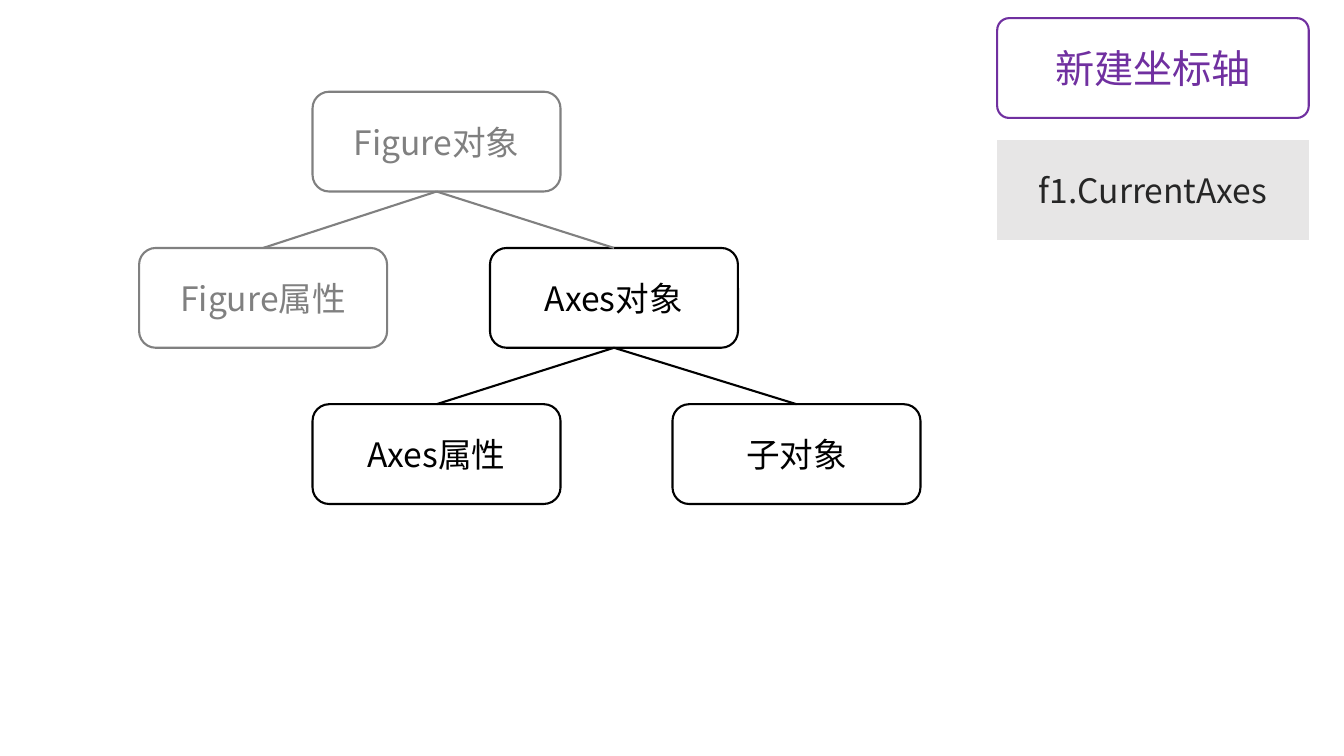
from lxml import etree
from pptx import Presentation
from pptx.dml.color import RGBColor
from pptx.enum.shapes import MSO_CONNECTOR, MSO_SHAPE
from pptx.enum.text import MSO_ANCHOR, PP_ALIGN
from pptx.oxml.ns import qn
from pptx.util import Inches, Pt

ROUNDED = MSO_SHAPE.ROUNDED_RECTANGLE
STRAIGHT = MSO_CONNECTOR.STRAIGHT
MIDDLE = MSO_ANCHOR.MIDDLE
CENTER = PP_ALIGN.CENTER
TOP_SITE, BOTTOM_SITE = 0, 2

FONT = "Noto Sans CJK SC"
GRAY, BLACK, WHITE, PURPLE = "808080", "000000", "FFFFFF", "7030A0"
LINE_WIDTH = 1.5
BOX_HEIGHT = 0.99
NODE_WIDTH, TREE_TOP, LEVEL_STEP = 2.46, 0.91, 1.55
PANEL_LEFT, PANEL_WIDTH, PANEL_TOP, PANEL_STEP = 9.89, 3.09, 0.18, 1.21

NODES = {
    "figure": ("Figure对象", 3.1, 0, GRAY),
    "figure_properties": ("Figure属性", 1.38, 1, GRAY),
    "axes": ("Axes对象", 4.86, 1, BLACK),
    "axes_properties": ("Axes属性", 3.1, 2, BLACK),
    "children": ("子对象", 6.67, 2, BLACK),
}
BRANCHES = [
    ("figure", "figure_properties", GRAY),
    ("figure", "axes", GRAY),
    ("axes", "axes_properties", BLACK),
    ("axes", "children", BLACK),
]
PANELS = [
    {"text": "新建坐标轴", "size": 28, "color": PURPLE, "fill": WHITE,
     "outline": PURPLE, "corner": 0.12},
    {"text": "f1.CurrentAxes", "size": 24, "color": "262626", "fill": "E7E6E6",
     "outline": None, "corner": 0},
]


def rgb(value):
    return RGBColor.from_string(value)


def set_attributes(target, values):
    for name, value in values.items():
        setattr(target, name, value)


def set_line(line, color):
    line.color.rgb = rgb(color)
    line.width = Pt(LINE_WIDTH)


def add_box(slide, left, top, width, text, color, fill, outline, size=24, corner=None):
    shape = slide.shapes.add_shape(
        ROUNDED, Inches(left), Inches(top), Inches(width), Inches(BOX_HEIGHT))
    shape.shadow.inherit = False
    if corner is not None:
        shape.adjustments[0] = corner
    shape.fill.solid()
    shape.fill.fore_color.rgb = rgb(fill)
    if outline:
        set_line(shape.line, outline)
    else:
        shape.line.fill.background()
    set_attributes(shape.text_frame, {"word_wrap": True, "vertical_anchor": MIDDLE})
    paragraph = shape.text_frame.paragraphs[0]
    paragraph.alignment = CENTER
    run = paragraph.add_run()
    run.text = text
    set_attributes(run.font, {"name": FONT, "size": Pt(size)})
    run.font.color.rgb = rgb(color)
    east_asian = etree.SubElement(run.font._element, qn("a:ea"))
    east_asian.set("typeface", FONT)
    return shape


def add_branch(slide, parent, child, color):
    connector = slide.shapes.add_connector(STRAIGHT, 0, 0, 0, 0)
    connector.begin_connect(parent, BOTTOM_SITE)
    connector.end_connect(child, TOP_SITE)
    set_line(connector.line, color)
    etree.SubElement(connector._element.spPr, qn("a:effectLst"))


def main():
    presentation = Presentation()
    set_attributes(presentation, {"slide_width": Inches(13.33), "slide_height": Inches(7.5)})
    slide = presentation.slides.add_slide(presentation.slide_layouts.get_by_name("Blank"))

    boxes = {
        name: add_box(slide, left, TREE_TOP + level * LEVEL_STEP, NODE_WIDTH,
                      text, color, WHITE, color)
        for name, (text, left, level, color) in NODES.items()
    }
    for parent, child, color in BRANCHES:
        add_branch(slide, boxes[parent], boxes[child], color)
    for index, panel in enumerate(PANELS):
        add_box(slide, PANEL_LEFT, PANEL_TOP + index * PANEL_STEP, PANEL_WIDTH, **panel)

    presentation.save("out.pptx")


if __name__ == "__main__":
    main()
